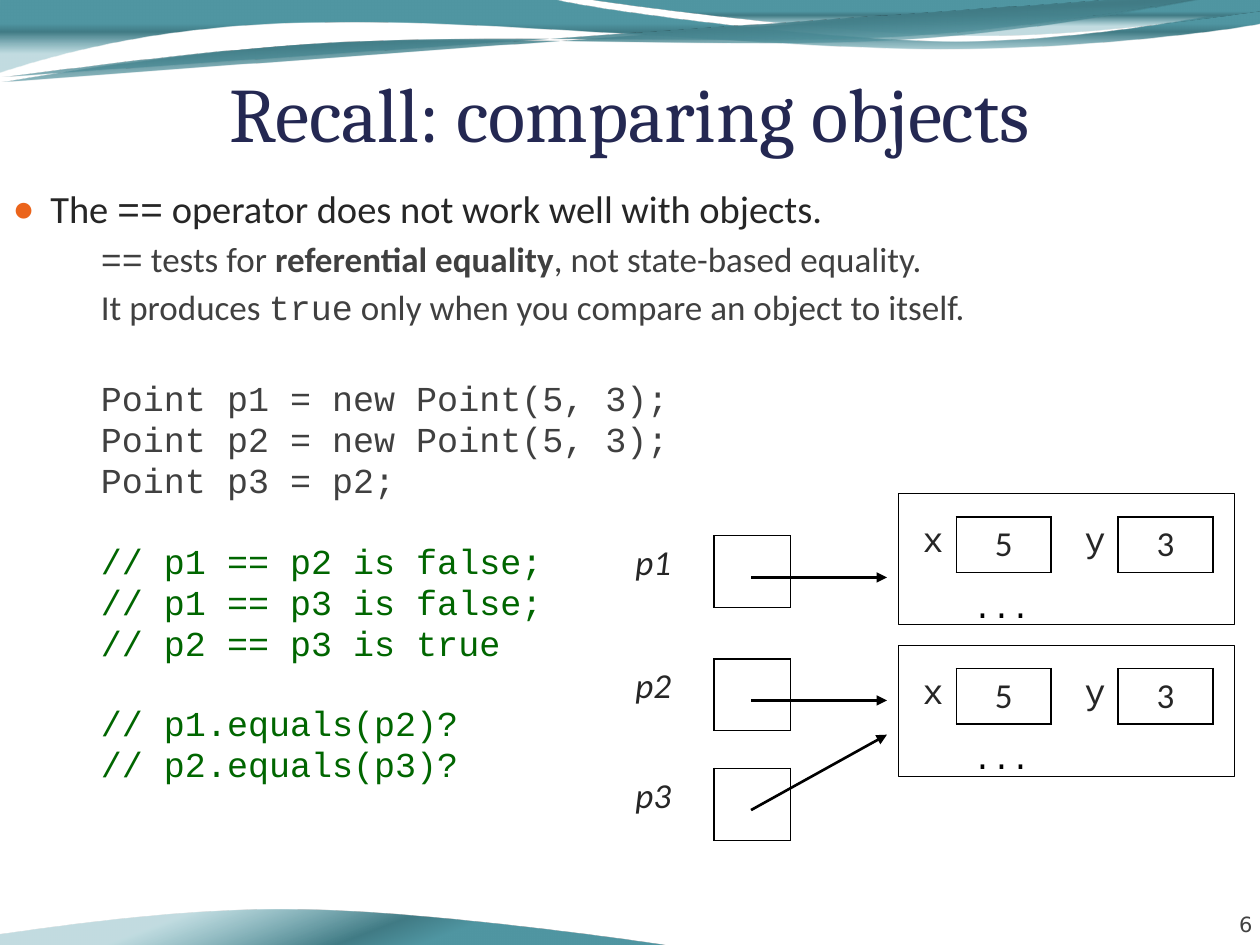
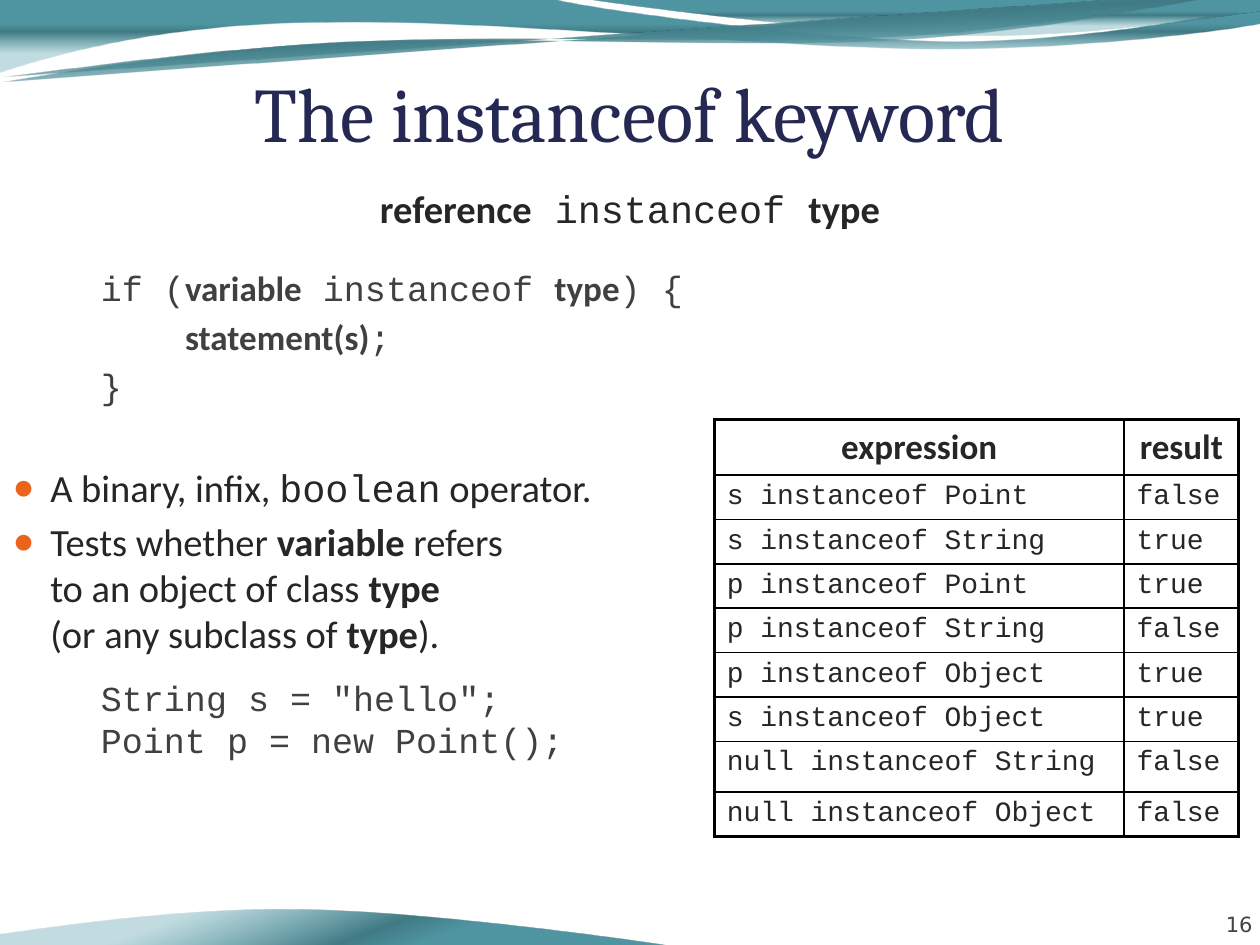
from pptx import Presentation
from pptx.dml.color import RGBColor
from pptx.enum.shapes import MSO_CONNECTOR, MSO_SHAPE
from pptx.enum.text import MSO_ANCHOR, MSO_AUTO_SIZE, PP_ALIGN
from pptx.oxml import parse_xml
from pptx.oxml.ns import nsdecls, qn
from pptx.util import Cm, Pt

LEFT, CENTER, RIGHT = PP_ALIGN.LEFT, PP_ALIGN.CENTER, PP_ALIGN.RIGHT
BOTTOM = MSO_ANCHOR.BOTTOM
NO_AUTOFIT = MSO_AUTO_SIZE.NONE
STRAIGHT = MSO_CONNECTOR.STRAIGHT
RECTANGLE = MSO_SHAPE.RECTANGLE

BLACK = RGBColor(0x00, 0x00, 0x00)
NAVY = RGBColor(0x24, 0x28, 0x52)
INK = RGBColor(0x26, 0x26, 0x26)
GRAY = RGBColor(0x40, 0x40, 0x40)
NUMBER_GRAY = RGBColor(0x42, 0x42, 0x42)
GREEN = RGBColor(0x00, 0x66, 0x00)
ORANGE = RGBColor(0xEB, 0x64, 0x1B)
TEAL = RGBColor(0x50, 0x96, 0xA2)
DARK_TEAL = RGBColor(0x41, 0x7B, 0x85)
LIGHT_TEAL = RGBColor(0x5A, 0xA2, 0xAE)

TITLE = ("Cambria", False, False)
NUMBER = ("DejaVu Sans", False, False)
TEXT = ("Calibri", False, False)
BOLD = ("Calibri", True, False)
ITALIC = ("Calibri", False, True)
CODE = ("Courier New", False, False)
BREAK = ("\n", None)

SIDES = ("left", "right", "top", "bottom")
SIDE_TAGS = dict(zip(SIDES, ("lnL", "lnR", "lnT", "lnB")))

WAVES = [
    (0, 90, True, (0, 0), [
        (11.18, 0),
        (12.09, 0.23, 16.87, 0.84, 19.25, 0.84),
        (21.67, 0.84, 24.33, 0.36, 25.4, 0.13),
        (25.43, 0.48),
        (24.97, 0.58, 22.1, 0.99, 18.95, 0.99),
        (15.8, 0.99, 9.7, 0.38, 6.53, 0.46),
        (3.28, 0.48, 1.17, 1.09, -0.03, 1.47)]),
    (0, 90, True, (11.86, 0), [
        (12.65, 0.13, 17.12, 0.69, 19.38, 0.71),
        (21.64, 0.76, 24.41, 0.36, 25.4, 0.23),
        (25.4, 0)]),
    (357.3, 90, False, (0, 1.05), [
        (1.25, 0.91, 4.06, 0.58, 7.09, 0.59),
        (10.11, 0.59, 15.05, 1.1, 18.13, 1.06),
        (21.18, 1.04, 23.92, 0.53, 25.43, 0.4)]),
    (357.3, 90, False, (0, 0.95), [
        (1.22, 0.88, 4.22, 0.57, 7.24, 0.58),
        (10.26, 0.58, 15.15, 1.02, 18.18, 1),
        (21.23, 0.96, 23.92, 0.5, 25.43, 0.4)]),
    (180, 70, True, (0, 18.34), [
        (0.78, 18.47, 5.25, 19.05, 7.52, 19.05),
        (9.78, 19.1, 12.54, 18.7, 13.51, 18.57),
        (13.51, 18.34)]),
]


class Lecture:
    def __init__(self):
        self.deck = Presentation()
        self.deck.slide_width, self.deck.slide_height = Cm(25.4), Cm(19.05)
        self.layout = self.deck.slide_layouts[1]
        self.page = None

    def add_page(self, title, number):
        first = self.page is None
        self.page = self.deck.slides.add_slide(self.layout)
        if first:
            for wave in WAVES:
                self.layout.shapes.element.append(self.wave(*wave).element)
        box = self.page.shapes.title
        box.left, box.top, box.width, box.height = Cm(1.27), Cm(1.22), Cm(22.86), Cm(1.96)
        self.frame(box, (0, 0.13, 0, 0), BOTTOM)
        self.fill_para(box.text_frame.paragraphs[0], [(title, TITLE)], 44, NAVY, CENTER)
        box = self.page.shapes.add_textbox(Cm(23.14), Cm(17.86), Cm(2.11), Cm(1.02))
        self.frame(box, (0, 0, 0, 0), BOTTOM)
        self.fill_para(box.text_frame.paragraphs[0], [(number, NUMBER)], 12, NUMBER_GRAY, RIGHT)
        self.body = self.page.placeholders[1]
        self.body.left, self.body.top = Cm(0), Cm(3.61)
        self.body.width, self.body.height = Cm(25.4), Cm(15.44)
        self.body.text_frame.auto_size = NO_AUTOFIT
        self.body_started = False

    def wave(self, turn, angle, closed, start, segments):
        builder = self.page.shapes.build_freeform(Cm(start[0]), Cm(start[1]))
        builder.add_line_segments([(Cm(s[-2]), Cm(s[-1])) for s in segments], close=closed)
        shape = builder.convert_to_shape()
        lines = list(shape.element.iter(qn("a:lnTo")))
        for line, segment in zip(lines, segments):
            if len(segment) == 6:
                points = "".join(
                    f'<a:pt x="{Cm(x) - shape.left}" y="{Cm(y) - shape.top}"/>'
                    for x, y in zip(segment[::2], segment[1::2]))
                curve = parse_xml(f'<a:cubicBezTo {nsdecls("a")}>{points}</a:cubicBezTo>')
                line.getparent().replace(line, curve)
        shape.rotation = turn
        shape.shadow.inherit = False
        shape.line.fill.background()
        shape.fill.background()
        properties = shape.element.find(qn("p:spPr"))
        properties.replace(properties.find(qn("a:noFill")), parse_xml(
            f'<a:gradFill {nsdecls("a")} rotWithShape="1"><a:gsLst>'
            f'<a:gs pos="33000"><a:srgbClr val="{TEAL}"/></a:gs>'
            f'<a:gs pos="44000"><a:srgbClr val="{DARK_TEAL}"/></a:gs>'
            f'<a:gs pos="74000"><a:srgbClr val="{LIGHT_TEAL}"><a:alpha val="37000"/></a:srgbClr></a:gs>'
            f'</a:gsLst><a:lin ang="{angle * 60000}" scaled="0"/></a:gradFill>'))
        return shape

    def frame(self, box, margins, anchor):
        frame = box.text_frame
        frame.word_wrap, frame.auto_size = True, NO_AUTOFIT
        frame.vertical_anchor = anchor
        frame.margin_left, frame.margin_top, frame.margin_right, frame.margin_bottom = map(Cm, margins)

    def fill_para(self, para, spans, size, color, align=LEFT):
        para.alignment = align
        para.font.size = Pt(size)
        for text, style in spans:
            if style is None:
                para.add_line_break()
                continue
            span = para.add_run()
            span.text = text
            span.font.name, span.font.bold, span.font.italic = style
            span.font.size, span.font.color.rgb = Pt(size), color

    def body_para(self, gap, margin, hanging):
        frame = self.body.text_frame
        para = frame.add_paragraph() if self.body_started else frame.paragraphs[0]
        self.body_started = True
        properties = para._p.get_or_add_pPr()
        properties.set("marL", str(Cm(margin)))
        properties.set("indent", str(-Cm(hanging)))
        para.space_before = Pt(gap)
        return para, properties

    def bullet(self, spans, gap=0):
        para, properties = self.body_para(gap, 0.76, 0.76)
        for tag in (f'<a:buClr {nsdecls("a")}><a:srgbClr val="{ORANGE}"/></a:buClr>',
                    f'<a:buSzPct {nsdecls("a")} val="95000"/>',
                    f'<a:buChar {nsdecls("a")} char="●"/>'):
            properties.append(parse_xml(tag))
        self.fill_para(para, spans, 22, INK)

    def heading(self, spans):
        para, properties = self.body_para(0, 0, 0)
        properties.append(parse_xml(f'<a:buNone {nsdecls("a")}/>'))
        self.fill_para(para, spans, 22, INK, CENTER)

    def detail(self, spans, gap=3.5, color=GRAY, line=None):
        para, properties = self.body_para(gap, 1.78, 0)
        properties.append(parse_xml(f'<a:buNone {nsdecls("a")}/>'))
        para.level = 1
        if line:
            para.line_spacing = Pt(line)
        self.fill_para(para, spans, 20, color)

    def code(self, lines, first_gap, color=GRAY, gap=3.5):
        for index, line in enumerate(lines):
            spans = [(line, CODE)] if isinstance(line, str) else line
            self.detail(spans, gap if index else first_gap, color, 20)

    def table(self, left, top, widths, heights):
        table = self.page.shapes.add_table(
            len(heights), len(widths), Cm(left), Cm(top), Cm(sum(widths)), Cm(sum(heights))).table
        table.first_row = table.horz_banding = False
        for column, width in zip(table.columns, widths):
            column.width = Cm(width)
        for row, height in zip(table.rows, heights):
            row.height = Cm(height)
        return table

    def cell(self, cell, text, style, size, align, borders):
        cell.fill.background()
        if text:
            self.fill_para(cell.text_frame.paragraphs[0], [(text, style)], size, INK, align)
        properties = cell._tc.get_or_add_tcPr()
        for index, side in enumerate(SIDES):
            width = borders.get(side, 0)
            paint = f'<a:solidFill><a:srgbClr val="{BLACK}"/></a:solidFill>' if width else "<a:noFill/>"
            properties.insert(index, parse_xml(
                f'<a:{SIDE_TAGS[side]} {nsdecls("a")} w="{Pt(width)}">{paint}</a:{SIDE_TAGS[side]}>'))

    def slots(self, left, top, widths, height, items):
        table = self.table(left, top, widths, [height])
        for index, (text, style, align) in enumerate(items):
            if index % 2:
                borders = dict.fromkeys(SIDES, 1)
            else:
                borders = {"right": 1, "left": 1 if index else 0}
            self.cell(table.cell(0, index), text, style, 20, align, borders)

    def results(self, left, top, widths, heights, rows):
        table = self.table(left, top, widths, heights)
        last_row, last_column = len(rows) - 1, len(widths) - 1
        for r, row in enumerate(rows):
            for c, text in enumerate(row):
                outer = {"left": c == 0, "right": c == last_column,
                         "top": r == 0, "bottom": r == last_row}
                borders = {side: 2.25 if edge else 1 for side, edge in outer.items()}
                look = (CODE, 16, LEFT) if r else (BOLD, 20, CENTER)
                self.cell(table.cell(r, c), text, *look, borders)

    def point_object(self, top):
        box = self.page.shapes.add_shape(RECTANGLE, Cm(18.11), Cm(top), Cm(6.78), Cm(2.64))
        box.shadow.inherit = False
        box.fill.background()
        box.line.color.rgb, box.line.width = BLACK, Pt(0.75)
        self.frame(box, (1.51, 0, 0, 0), BOTTOM)
        self.fill_para(box.text_frame.paragraphs[0], [("...", CODE)], 18, BLACK)
        self.slots(18.34, top + 0.47, (0.94, 1.91, 1.35, 1.91), 1.09,
                   [("x", CODE, CENTER), ("5", TEXT, CENTER), ("y", CODE, RIGHT), ("3", TEXT, CENTER)])

    def reference(self, name, top, target):
        self.slots(11.95, top, (2.44, 1.55), 1.45, [(name, ITALIC, CENTER), ("", TEXT, CENTER)])
        self.arrow(15.14, top + 0.84, 17.88, target)

    def arrow(self, x1, y1, x2, y2):
        arrow = self.page.shapes.add_connector(STRAIGHT, Cm(x1), Cm(y1), Cm(x2), Cm(y2))
        arrow.line.color.rgb, arrow.line.width = BLACK, Pt(1.5)
        properties = arrow.element.find(qn("p:spPr"))
        properties.find(qn("a:ln")).append(parse_xml(f'<a:tailEnd {nsdecls("a")} type="triangle"/>'))
        properties.append(parse_xml(f'<a:effectLst {nsdecls("a")}/>'))


def comparing_objects(lecture):
    lecture.add_page("Recall: comparing objects", "6")
    lecture.bullet([("The ", TEXT), ("==", CODE), (" operator does not work well with objects.", TEXT)])
    lecture.detail([("==", CODE), (" tests for ", TEXT), ("referential equality", BOLD),
                    (", not state-based equality.", TEXT)])
    lecture.detail([("It produces ", TEXT), ("true", CODE),
                    (" only when you compare an object to itself.", TEXT)])
    lecture.code(["Point p1 = new Point(5, 3);", "Point p2 = new Point(5, 3);", "Point p3 = p2;"], 31.7)
    lecture.code(["// p1 == p2 is false;", "// p1 == p3 is false;", "// p2 == p3 is true"], 26, GREEN)
    lecture.code(["// p1.equals(p2)?", "// p2.equals(p3)?"], 26, GREEN)
    for top in (9.95, 13.01):
        lecture.point_object(top)
    for name, top, target in (("p1", 10.8, 11.64), ("p2", 13.28, 14.12), ("p3", 15.49, 14.81)):
        lecture.reference(name, top, target)


def instanceof_keyword(lecture):
    lecture.add_page("The instanceof keyword", "16")
    lecture.heading([("reference", BOLD), (" instanceof ", CODE), ("type", BOLD)])
    lecture.code([
        [("if (", CODE), ("variable", BOLD), (" instanceof ", CODE), ("type", BOLD), (") {", CODE)],
        [("    ", CODE), ("statement(s)", BOLD), (";", CODE)],
        "}"], 24.2, gap=8)
    lecture.bullet([("A binary, infix, ", TEXT), ("boolean", CODE), (" operator.", TEXT)], 32.6)
    lecture.bullet([("Tests whether ", TEXT), ("variable", BOLD), (" refers", TEXT), BREAK,
                    ("to an object of class ", TEXT), ("type", BOLD), BREAK,
                    ("(or any subclass of ", TEXT), ("type", BOLD), (").", TEXT)], 4.4)
    lecture.code(['String s = "hello";', "Point p = new Point();"], 15.7)
    lecture.results(14.4, 8.46, (8.26, 2.31), [1.11] + [0.89] * 6 + [1.02, 0.89], [
        ("expression", "result"),
        ("s instanceof Point", "false"),
        ("s instanceof String", "true"),
        ("p instanceof Point", "true"),
        ("p instanceof String", "false"),
        ("p instanceof Object", "true"),
        ("s instanceof Object", "true"),
        ("null instanceof String", "false"),
        ("null instanceof Object", "false")])


def main():
    lecture = Lecture()
    comparing_objects(lecture)
    instanceof_keyword(lecture)
    lecture.deck.save("out.pptx")


if __name__ == "__main__":
    main()
